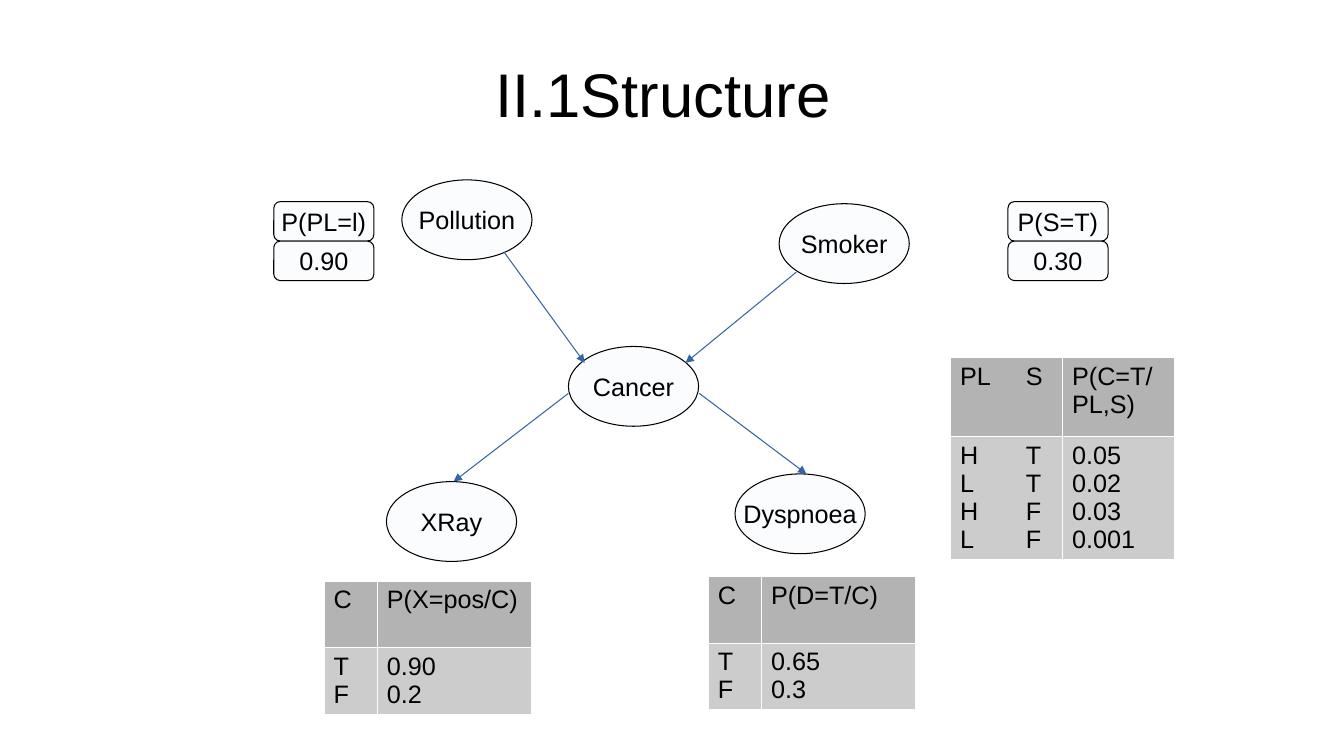
from pptx import Presentation
from pptx.dml.color import RGBColor
from pptx.enum.shapes import MSO_CONNECTOR, MSO_SHAPE
from pptx.enum.text import MSO_ANCHOR, PP_ALIGN
from pptx.oxml.ns import qn
from pptx.util import Pt
from lxml.etree import SubElement

BLACK = RGBColor(0x00, 0x00, 0x00)
WHITE = RGBColor(0xFF, 0xFF, 0xFF)
PALE = RGBColor(0xFB, 0xFC, 0xFD)
BLUE = RGBColor(0x34, 0x65, 0xA4)
HEADER_GREY = RGBColor(0xB3, 0xB3, 0xB3)
BODY_GREY = RGBColor(0xCC, 0xCC, 0xCC)

NODE_SIZE = (93, 57)
PRIOR_SIZE = (71.5, 28.2)
PARENT_TAB = 47

# Node name, left, top
NODES = [
    ("Smoker", 556.5, 145.5),
    ("Pollution", 287, 128.5),
    ("Cancer", 406, 247.5),
    ("XRay", 276, 344),
    ("Dyspnoea", 525, 338.5),
]
# Start and end of each arrow
ARROWS = [
    ((406, 281), (324, 344)),
    ((499.5, 281), (576, 338.5)),
    ((568.8, 194.4), (489.6, 259.2)),
    ((360, 180), (417.6, 259.2)),
]
# Heading, probability, left
PRIORS = [("P(S=T)", "0.30", 720), ("P(PL=l)", "0.90", 195.6)]
PRIOR_TOP = 144
# Left, top, column widths, row height, cell texts
TABLES = [
    (678.6, 255.2, (80, 80), 56.5,
     [("PL\tS", "P(C=T/PL,S)"),
      ("H\tT\nL\tT\nH\tF\nL\tF", "0.05\n0.02\n0.03\n0.001")]),
    (231.2, 415, (38, 110), 47.5,
     [("C", "P(X=pos/C)"), ("T\nF", "0.90\n0.2")]),
    (505.6, 411.5, (38, 110), 47.5,
     [("C", "P(D=T/C)"), ("T\nF", "0.65\n0.3")]),
]


def format_text(text_frame, size=18, align=PP_ALIGN.LEFT):
    for paragraph in text_frame.paragraphs:
        paragraph.alignment = align
        if "\t" in paragraph.text:
            tabs = SubElement(paragraph._p.get_or_add_pPr(), qn("a:tabLst"))
            SubElement(tabs, qn("a:tab"), pos=str(Pt(PARENT_TAB)), algn="l")
        paragraph.font.name = "Arial"
        paragraph.font.size = Pt(size)
        paragraph.font.color.rgb = BLACK


def set_title(slide, text):
    title = slide.shapes.title
    title.left, title.top, title.width, title.height = Pt(48), Pt(21.6), Pt(863.5), Pt(89.3)
    frame = title.text_frame
    frame.margin_left = frame.margin_top = frame.margin_right = frame.margin_bottom = 0
    frame.vertical_anchor = MSO_ANCHOR.MIDDLE
    frame.text = text
    format_text(frame, 44, PP_ALIGN.CENTER)


def add_label(shapes, kind, text, left, top, size):
    shape = shapes.add_shape(kind, Pt(left), Pt(top), Pt(size[0]), Pt(size[1]))
    shape.shadow.inherit = False
    shape.fill.solid()
    shape.fill.fore_color.rgb = PALE
    shape.line.color.rgb = BLACK
    shape.line.width = Pt(0.75)
    frame = shape.text_frame
    frame.text = text
    frame.word_wrap = False
    frame.vertical_anchor = MSO_ANCHOR.MIDDLE
    format_text(frame, align=PP_ALIGN.CENTER)


def add_prior(slide, heading, value, left):
    group = slide.shapes.add_group_shape()
    for row, text in enumerate((heading, value)):
        add_label(group.shapes, MSO_SHAPE.FLOWCHART_ALTERNATE_PROCESS, text,
                  left, PRIOR_TOP + row * PRIOR_SIZE[1], PRIOR_SIZE)


def add_arrow(slide, start, end):
    arrow = slide.shapes.add_connector(
        MSO_CONNECTOR.STRAIGHT, *(Pt(value) for value in start + end))
    arrow.line.color.rgb = BLUE
    arrow.line.width = Pt(0.75)
    SubElement(arrow.line._get_or_add_ln(), qn("a:tailEnd"), type="triangle")
    SubElement(arrow._element.spPr, qn("a:effectLst"))


def format_cell(cell, text, color):
    properties = cell._tc.get_or_add_tcPr()
    for side in ("lnL", "lnR", "lnT", "lnB"):
        border = SubElement(properties, qn(f"a:{side}"), w=str(Pt(0.06)))
        fill = SubElement(border, qn("a:solidFill"))
        SubElement(fill, qn("a:srgbClr"), val=str(WHITE))
    cell.fill.solid()
    cell.fill.fore_color.rgb = color
    cell.text = text
    format_text(cell.text_frame)


def add_probability_table(slide, left, top, widths, row_height, rows):
    table = slide.shapes.add_table(
        len(rows), len(widths), Pt(left), Pt(top),
        Pt(sum(widths)), Pt(row_height * len(rows))).table
    for column, width in zip(table.columns, widths):
        column.width = Pt(width)
    for row_index, texts in enumerate(rows):
        color = BODY_GREY if row_index else HEADER_GREY
        for column_index, text in enumerate(texts):
            format_cell(table.cell(row_index, column_index), text, color)


def main():
    presentation = Presentation()
    presentation.slide_width, presentation.slide_height = Pt(960), Pt(540)
    slide = presentation.slides.add_slide(presentation.slide_layouts[5])
    set_title(slide, "II.1Structure ")

    # Network
    for name, left, top in NODES:
        add_label(slide.shapes, MSO_SHAPE.OVAL, name, left, top, NODE_SIZE)
    for start, end in ARROWS:
        add_arrow(slide, start, end)

    # Probabilities
    for prior in PRIORS:
        add_prior(slide, *prior)
    for table in TABLES:
        add_probability_table(slide, *table)

    presentation.save("out.pptx")


if __name__ == "__main__":
    main()
